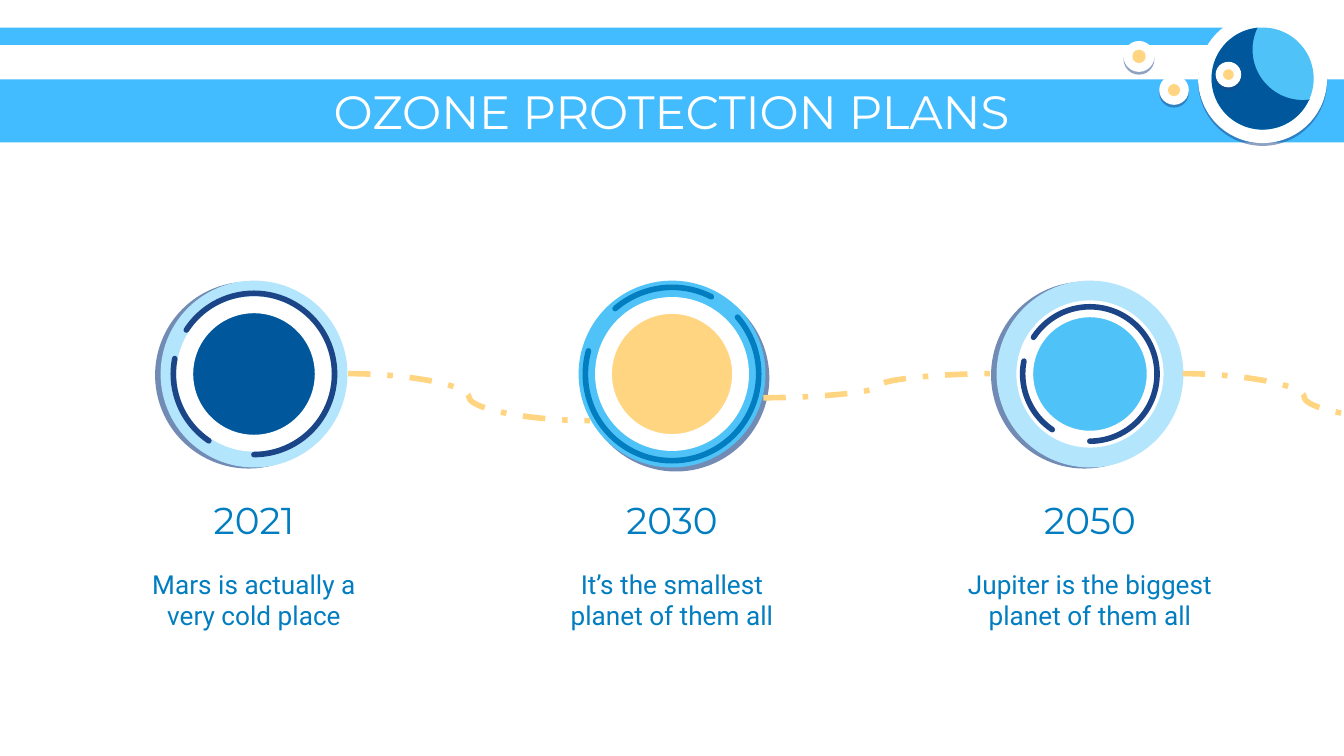
"""Build the ozone protection timeline slide on a grid of 100 columns."""
from dataclasses import dataclass
from math import cos, radians, sin

from lxml import etree
from pptx import Presentation
from pptx.dml.color import RGBColor
from pptx.enum.dml import MSO_LINE
from pptx.enum.shapes import MSO_CONNECTOR, MSO_SHAPE
from pptx.enum.text import MSO_ANCHOR, PP_ALIGN
from pptx.oxml.ns import qn
from pptx.util import Emu, Inches, Pt

OVAL, RECTANGLE, ARC = MSO_SHAPE.OVAL, MSO_SHAPE.RECTANGLE, MSO_SHAPE.ARC
CURVE, DASH_DOT = MSO_CONNECTOR.CURVE, MSO_LINE.DASH_DOT
CENTER, MIDDLE = PP_ALIGN.CENTER, MSO_ANCHOR.MIDDLE
COLUMNS, ROWS = 100, 56.25
COLUMN = Inches(10) / COLUMNS
WHITE, SKY, BLUE, DEEP = "FFFFFF", "42BCFE", "4FC3F7", "01579B"
PALE, SAND, NAVY, INK = "B3E5FC", "FFD581", "1C4587", "017DC0"
HEADING, BODY = "Montserrat", "Roboto"
SIDE_ARCS = ((213, 90), (124, 191))


@dataclass(frozen=True)
class Shadow:
    """Shadow opacity in percent, distance in points and direction in degrees."""
    opacity: int
    distance: float
    direction: int


@dataclass(frozen=True)
class Milestone:
    """One dated stop; radii are in columns and arcs in clockwise degrees."""
    year: str
    text: str
    ring: str
    core: str
    core_radius: float
    arc_color: str
    arc_radius: float
    arcs: tuple
    shadow: Shadow


@dataclass(frozen=True)
class Moon:
    """A small white disc with a sand centre."""
    x: float
    y: float
    radius: float
    core_radius: float


@dataclass(frozen=True)
class Path:
    """A dashed curve between two grid points."""
    start: tuple
    end: tuple


SOFT = Shadow(50, 1.5, 90)
LEFTWARD, RIGHTWARD = Shadow(61, 3, 169), Shadow(61, 3, 46)
MILESTONES = (
    Milestone("2021", "Mars is actually a very cold place", PALE, DEEP, 5.15,
              NAVY, 6, SIDE_ARCS, LEFTWARD),
    Milestone("2030", "It’s the smallest planet of them all", BLUE, SAND, 5.1,
              INK, 6.45, ((319, 195.5), (229, 297)), RIGHTWARD),
    Milestone("2050", "Jupiter is the biggest planet of them all", PALE, BLUE, 4.85,
              NAVY, 5, SIDE_ARCS, LEFTWARD),
)
FIRST_X, STEP_X, RING_Y, RING_RADIUS = 18.9, 31.1, 27.83, 6.95
MOONS = (Moon(87.35, 6.7, 1.1, 0.45), Moon(84.75, 4.2, 1.15, 0.5),
         Moon(91.4, 5.55, 0.95, 0.4))
PATHS = (Path((25.9, 27.8), (43.9, 31.3)), Path((56.8, 29.6), (74.1, 27.8)),
         Path((88, 27.8), (106.1, 31.3)))


def color(value: str) -> RGBColor:
    """Turn a hex string into a colour."""
    return RGBColor.from_string(value)


def cell(count: float) -> Emu:
    """Turn grid columns into a length."""
    return Emu(round(count * COLUMN))


def paint(shape, fill=None, line=None, width=0) -> None:
    """Set the fill and outline of a shape."""
    shape.shadow.inherit = False
    if fill:
        shape.fill.solid()
        shape.fill.fore_color.rgb = color(fill)
    else:
        shape.fill.background()
    if line:
        shape.line.color.rgb = color(line)
        shape.line.width = Pt(width)
    else:
        shape.line.fill.background()


def cast_shadow(shape, shadow: Shadow) -> None:
    """Add an outer shadow to a shape."""
    effects = shape._element.spPr.find(qn("a:effectLst"))
    outer = etree.SubElement(effects, qn("a:outerShdw"), {
        "dist": str(Pt(shadow.distance)), "dir": str(shadow.direction * 60000),
        "algn": "bl", "rotWithShape": "0"})
    tint = etree.SubElement(outer, qn("a:srgbClr"), val=NAVY)
    etree.SubElement(tint, qn("a:alpha"), val=str(shadow.opacity * 1000))


def add_bar(page, top: float, width: float, height: float, fill: str) -> None:
    """Draw a bar from the left edge."""
    paint(page.shapes.add_shape(RECTANGLE, 0, cell(top), cell(width), cell(height)), fill)


def add_round(page, kind, x: float, y: float, radius: float):
    """Place a round shape by its centre."""
    return page.shapes.add_shape(kind, cell(x - radius), cell(y - radius),
                                 cell(2 * radius), cell(2 * radius))


def add_disc(page, x: float, y: float, radius: float, fill: str,
             line=None, width=0, shadow=None) -> None:
    """Draw a disc, with a shadow if one is given."""
    disc = add_round(page, OVAL, x, y, radius)
    paint(disc, fill, line, width)
    if shadow:
        cast_shadow(disc, shadow)


def add_arc(page, x: float, y: float, radius: float, angles: tuple, line: str) -> None:
    """Draw an arc with round ends."""
    arc = add_round(page, ARC, x, y, radius)
    for index, angle in enumerate(angles):
        arc.adjustments[index] = angle * 0.6
    paint(arc, None, line, 3)
    arc.line._get_or_add_ln().set("cap", "rnd")


def arc_points(x: float, y: float, radius: float, start: float, end: float) -> list:
    """Sample points along an arc."""
    angles = [radians(start + (end - start) * index / 60) for index in range(61)]
    return [(cell(x + radius * cos(angle)), cell(y + radius * sin(angle)))
            for angle in angles]


def add_planet(page) -> None:
    """Draw the corner planet and its moons."""
    x, y = 93.95, 5.85
    add_disc(page, x, y, 4.8, WHITE, shadow=SOFT)
    add_disc(page, x, y, 3.8, BLUE)
    outline = arc_points(x, y, 3.8, 24, 264) + arc_points(96.95, 3.7, 3.75, 206, 82)
    builder = page.shapes.build_freeform(*outline[0])
    builder.add_line_segments(outline[1:], close=True)
    paint(builder.convert_to_shape(), DEEP)
    for moon in MOONS:
        add_disc(page, moon.x, moon.y, moon.radius, WHITE, shadow=SOFT)
        add_disc(page, moon.x, moon.y, moon.core_radius, SAND)


def add_text(page, text: str, area: tuple, size: float, font: str, ink: str) -> None:
    """Write centred text in an area of left, top, width and height."""
    box = page.shapes.add_textbox(*map(cell, area))
    frame = box.text_frame
    formats = {"word_wrap": True, "vertical_anchor": MIDDLE}
    formats |= {f"margin_{side}": cell(1) for side in ("left", "top", "right", "bottom")}
    for name, value in formats.items():
        setattr(frame, name, value)
    para = frame.paragraphs[0]
    para.alignment = CENTER
    span = para.add_run()
    span.text = text
    for name, value in {"size": Pt(size), "name": font}.items():
        setattr(span.font, name, value)
    span.font.color.rgb = color(ink)


def add_badge(page, stop: Milestone, x: float) -> None:
    """Draw the ring, core and arcs of a milestone."""
    add_disc(page, x, RING_Y, RING_RADIUS, stop.ring, shadow=stop.shadow)
    add_disc(page, x, RING_Y, stop.core_radius, stop.core, WHITE, 9)
    for angles in stop.arcs:
        add_arc(page, x, RING_Y, stop.arc_radius, angles, stop.arc_color)


def add_path(page, path: Path) -> None:
    """Draw a dashed curved connector."""
    curve = page.shapes.add_connector(CURVE, *map(cell, path.start + path.end))
    curve.line.color.rgb = color(SAND)
    for name, value in {"width": Pt(3), "dash_style": DASH_DOT}.items():
        setattr(curve.line, name, value)
    etree.SubElement(curve._element.spPr, qn("a:effectLst"))


def main() -> None:
    """Build and save the deck."""
    deck = Presentation()
    deck.slide_width, deck.slide_height = cell(COLUMNS), cell(ROWS)
    page = deck.slides.add_slide(deck.slide_layouts[6])
    page.background.fill.solid()
    page.background.fill.fore_color.rgb = color(INK)
    add_bar(page, 0, COLUMNS, ROWS, WHITE)
    add_bar(page, 5.9, COLUMNS, 4.7, SKY)
    add_bar(page, 2.05, 94.9, 1.3, SKY)
    add_planet(page)
    add_text(page, "OZONE PROTECTION PLANS", (14.4, 5.9, 71.1, 4.7), 25, HEADING, WHITE)
    centers = [FIRST_X + STEP_X * index for index in range(len(MILESTONES))]
    for stop, x in zip(MILESTONES, centers):
        add_badge(page, stop, x)
    for path in PATHS:
        add_path(page, path)
    for stop, x in zip(MILESTONES, centers):
        add_text(page, stop.text, (x - 10.4, 40.9, 20.8, 7.4), 14, BODY, INK)
        add_text(page, stop.year, (x - 10.4, 36.4, 20.8, 4.5), 20, HEADING, INK)
    deck.save("out.pptx")


if __name__ == "__main__":
    main()
